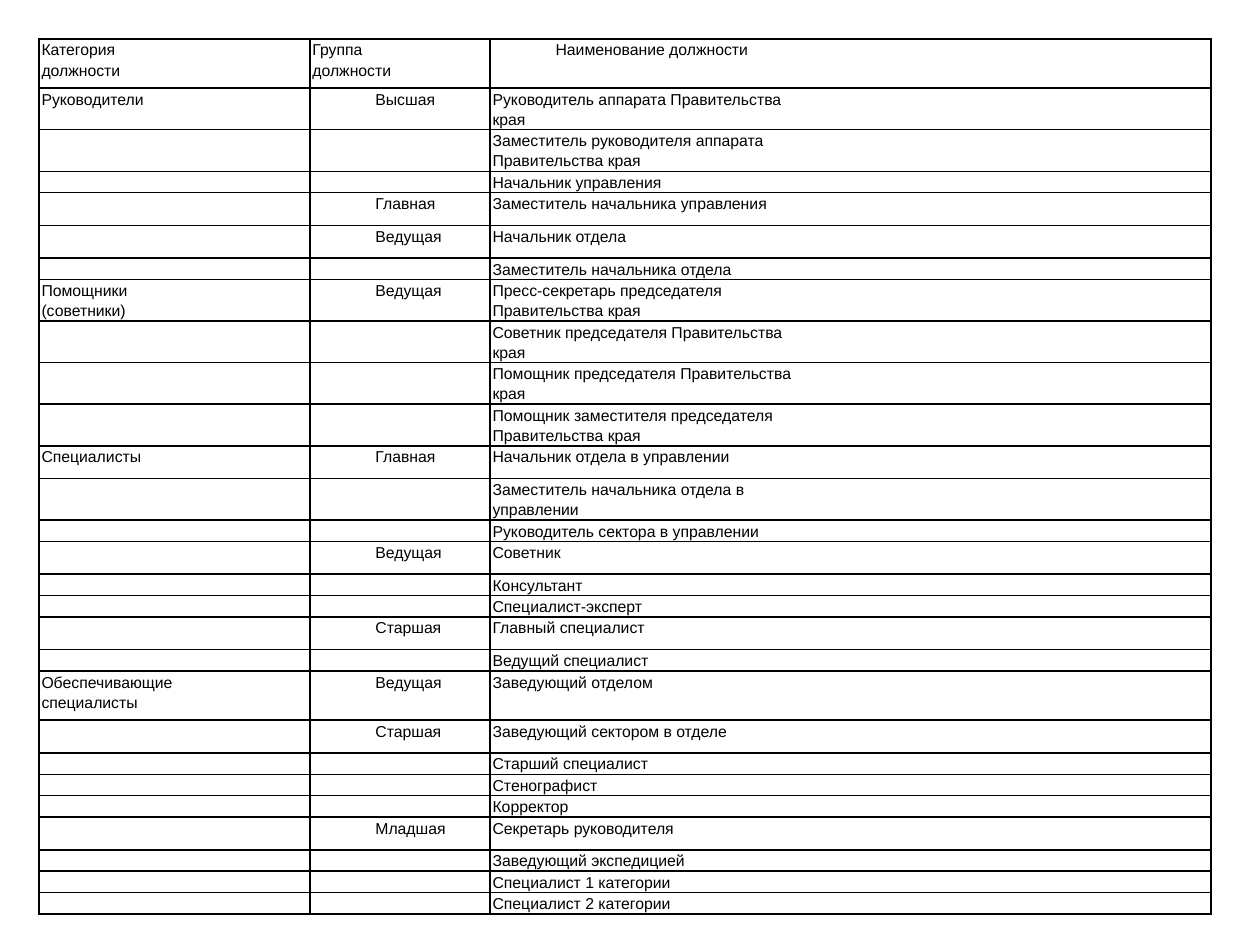
from lxml.etree import SubElement
from pptx import Presentation
from pptx.dml.color import RGBColor
from pptx.oxml.ns import qn
from pptx.util import Inches, Pt

FONT, FONT_SIZE, INK = "Arial", 9, "000000"
LEFT = TOP = 0.31
COLUMN_WIDTHS = (2.15, 1.43, 5.72)
NAME_LINE, GROUP_LINE = 0.17, 0.13
CELL_INSET, FIRST_LINE_INDENT = 0.02, 0.5

HEADER = ("Категория\nдолжности", "Группа\nдолжности", "Наименование должности")
# category, then its groups, each with its positions
POSITIONS = [
    ("Руководители", [
        ("Высшая", ["Руководитель аппарата Правительства\nкрая",
                    "Заместитель руководителя аппарата\nПравительства края",
                    "Начальник управления"]),
        ("Главная", ["Заместитель начальника управления"]),
        ("Ведущая", ["Начальник отдела", "Заместитель начальника отдела"]),
    ]),
    ("Помощники\n(советники)", [
        ("Ведущая", ["Пресс-секретарь председателя\nПравительства края",
                     "Советник председателя Правительства\nкрая",
                     "Помощник председателя Правительства\nкрая",
                     "Помощник заместителя председателя\nПравительства края"]),
    ]),
    ("Специалисты", [
        ("Главная", ["Начальник отдела в управлении",
                     "Заместитель начальника отдела в\nуправлении",
                     "Руководитель сектора в управлении"]),
        ("Ведущая", ["Советник", "Консультант", "Специалист-эксперт"]),
        ("Старшая", ["Главный специалист", "Ведущий специалист"]),
    ]),
    ("Обеспечивающие\nспециалисты", [
        ("Ведущая", ["Заведующий отделом"]),
        ("Старшая", ["Заведующий сектором в отделе", "Старший специалист",
                     "Стенографист", "Корректор"]),
        ("Младшая", ["Секретарь руководителя", "Заведующий экспедицией",
                     "Специалист 1 категории", "Специалист 2 категории"]),
    ]),
]


def rgb(color):
    return RGBColor.from_string(color)


def flatten(positions):
    """One row per position; category and group stand only in their first row."""
    rows = []
    for category, groups in positions:
        for g, (group, names) in enumerate(groups):
            for n, name in enumerate(names):
                rows.append((category if g == n == 0 else "",
                             group if n == 0 else "", name))
    return rows


def row_height(category, group, name):
    if "\n" in name:
        return 0.33
    if group:
        return GROUP_LINE * (2 + category.count("\n"))
    return NAME_LINE


def add_borders(cell):
    properties = cell._tc.get_or_add_tcPr()
    for index, side in enumerate(("lnL", "lnR", "lnT", "lnB")):
        line = properties.makeelement(qn(f"a:{side}"), {"w": str(Pt(1))})
        properties.insert(index, line)
        fill = SubElement(line, qn("a:solidFill"))
        SubElement(fill, qn("a:srgbClr"), val=INK)


def fill_cell(cell, text, indented):
    cell.fill.background()
    cell.margin_left = cell.margin_right = Inches(CELL_INSET)
    cell.margin_top = cell.margin_bottom = 0
    add_borders(cell)
    paragraph = cell.text_frame.paragraphs[0]
    paragraph.text = text.replace("\n", "\v")
    paragraph.line_spacing = 1.15
    if indented:
        properties = paragraph._p.get_or_add_pPr()
        properties.set("marL", "0")
        properties.set("indent", str(Inches(FIRST_LINE_INDENT)))
    for run in paragraph.runs:
        run.font.name = FONT
        run.font.size = Pt(FONT_SIZE)
        run.font.color.rgb = rgb(INK)
    size = str(FONT_SIZE * 100)
    for line_break in paragraph._p.findall(qn("a:br")):
        SubElement(line_break, qn("a:rPr"), sz=size)
    # keeps empty cells from stretching their row
    SubElement(paragraph._p, qn("a:endParaRPr"), sz=size)


def main():
    presentation = Presentation()
    presentation.slide_width, presentation.slide_height = Inches(10), Inches(7.5)
    slide = presentation.slides.add_slide(presentation.slide_layouts[6])

    rows = [HEADER] + flatten(POSITIONS)
    heights = [row_height(*row) for row in rows]
    table = slide.shapes.add_table(
        len(rows), len(COLUMN_WIDTHS), Inches(LEFT), Inches(TOP),
        Inches(sum(COLUMN_WIDTHS)), Inches(sum(heights))).table
    table.first_row = table.horz_banding = False
    for column, width in zip(table.columns, COLUMN_WIDTHS):
        column.width = Inches(width)
    for r, (row, height) in enumerate(zip(rows, heights)):
        table.rows[r].height = Inches(height)
        for c, text in enumerate(row):
            indented = bool(text) and c == (2 if r == 0 else 1)
            fill_cell(table.cell(r, c), text, indented)

    presentation.save("out.pptx")


if __name__ == "__main__":
    main()
